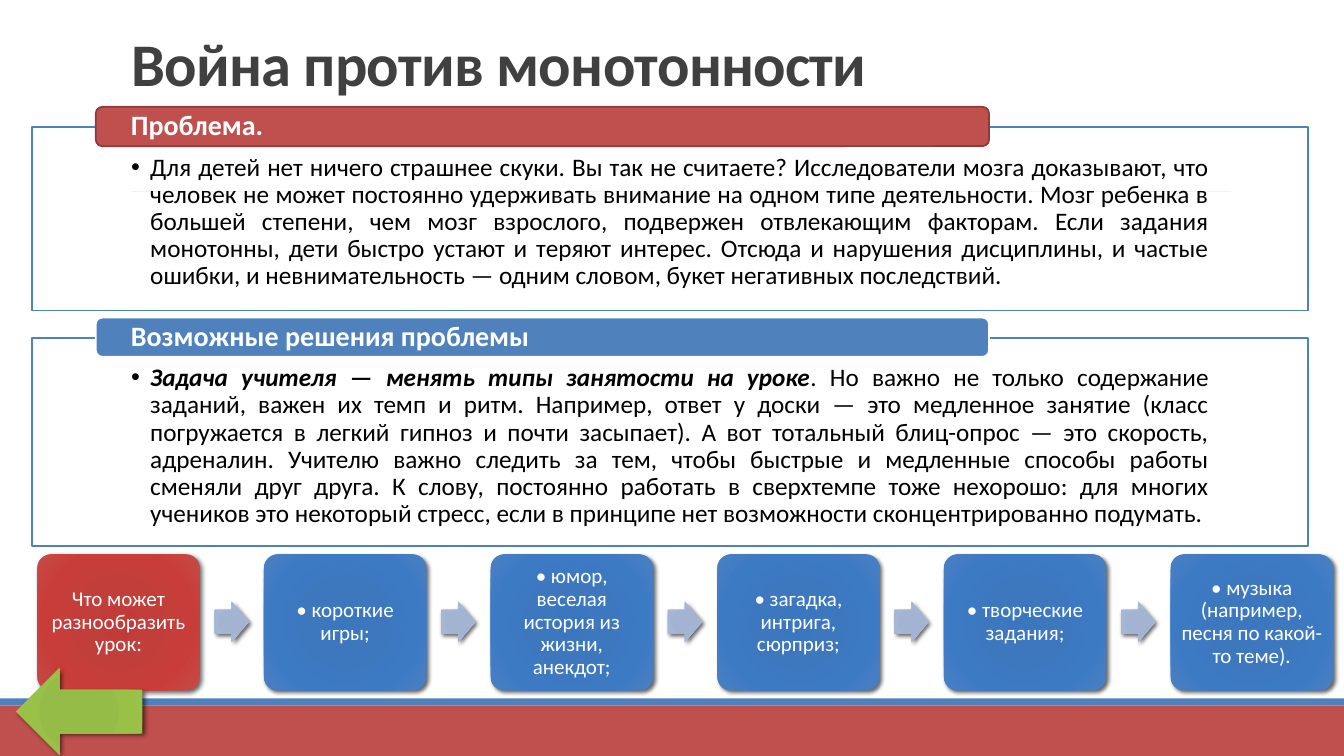
from lxml import etree
from pptx import Presentation
from pptx import util as u
from pptx.dml.color import RGBColor
from pptx.enum import shapes, text
from pptx.oxml import ns

RED, BLUE, WHITE = "C0504D", "4F81BD", "FFFFFF"
RED_GLOW = ("C33B38", "C23E3B", "C83D39", "C64B47")
BLUE_GLOW = ("3A77BF", "3D78BF", "3C7AC4", "4A80C3")
PALE_GLOW = ("A1B2D1", "A3B4D2", "A5B6D6", "B1C0DD")
GREEN_GLOW = ("95BC45", "96BC48", "99C147", "9DC054")
STOPS = (0, 34, 70, 100)

TITLE = "Война против монотонности"
PANELS = [
    # top, height, header, header fill, header outline, (text, emphasis) pieces
    (1.26, 1.82, "Проблема.", RED, "8E3B39", [
        ("Для детей нет ничего страшнее скуки. Вы так не считаете? Исследователи мозга "
         "доказывают, что человек не может постоянно удерживать внимание на одном типе "
         "деятельности. Мозг ребенка в большей степени, чем мозг взрослого, подвержен "
         "отвлекающим факторам. Если задания монотонны, дети быстро устают и теряют "
         "интерес. Отсюда и нарушения дисциплины, и частые ошибки, и невнимательность — "
         "одним словом, букет негативных последствий.", False)]),
    (3.35, 2.07, "Возможные решения проблемы", BLUE, WHITE, [
        ("Задача учителя — менять типы занятости на уроке", True),
        (". Но важно не только содержание заданий, важен их темп и ритм. Например, ответ "
         "у доски — это медленное занятие (класс погружается в легкий гипноз и почти "
         "засыпает). А вот тотальный блиц-опрос — это скорость, адреналин. Учителю важно "
         "следить за тем, чтобы быстрые и медленные способы работы сменяли друг друга. "
         "К слову, постоянно работать в сверхтемпе тоже нехорошо: для многих учеников "
         "это некоторый стресс, если в принципе нет возможности сконцентрированно "
         "подумать.", False)]),
]
STEPS = ["Что может разнообразить урок:", "• короткие игры;",
         "• юмор, веселая история из жизни, анекдот;",
         "• загадка, интрига, сюрприз;", "• творческие задания;",
         "• музыка (например, песня по какой-то теме)."]


def rgb(value):
    return RGBColor.from_string(value)


def add_xml(parent, tag, **attributes):
    return etree.SubElement(parent, ns.qn(tag), {k: str(v) for k, v in attributes.items()})


class LessonSlide:
    font = "Calibri"

    def __init__(self, deck):
        self.slide = deck.slides.add_slide(deck.slide_layouts[5])

    def shape(self, kind, box, fill=None, outline=None, adjust=()):
        figure = self.slide.shapes.add_shape(kind, *map(u.Inches, box))
        figure.shadow.inherit = False
        for index, value in enumerate(adjust):
            figure.adjustments[index] = value
        if fill:
            figure.fill.solid()
            figure.fill.fore_color.rgb = rgb(fill)
        else:
            figure.fill.background()
        if outline:
            figure.line.color.rgb = rgb(outline)
            figure.line.width = u.Pt(1.25)
        else:
            figure.line.fill.background()
        return figure

    def glowing(self, kind, box, colors, blur=3, adjust=()):
        """Shape with a radial gradient and a soft shadow."""
        figure = self.shape(kind, box, adjust=adjust)
        props = figure._element.spPr
        gradient = etree.Element(ns.qn("a:gradFill"), rotWithShape="1")
        stops = add_xml(gradient, "a:gsLst")
        for position, color in zip(STOPS, colors):
            stop = add_xml(stops, "a:gs", pos=position * 1000)
            add_xml(stop, "a:srgbClr", val=color)
        radial = add_xml(gradient, "a:path", path="circle")
        add_xml(radial, "a:fillToRect", **dict.fromkeys("ltrb", 100000))
        props.replace(props.find(ns.qn("a:noFill")), gradient)
        shadow = add_xml(props.find(ns.qn("a:effectLst")), "a:outerShdw",
                         blurRad=int(u.Pt(blur)), dist=int(u.Pt(2)), dir=45 * 60000,
                         algn="tl", rotWithShape=0)
        add_xml(add_xml(shadow, "a:srgbClr", val="000000"), "a:alpha", val=60000)
        return figure

    def add_text(self, holder, pieces, size, color, align, anchor, insets,
                 spacing=0.9, bullet=False, bold=False):
        frame = holder.text_frame
        left, top, right, bottom = map(u.Inches, insets)
        for name, value in {"word_wrap": True, "auto_size": text.MSO_AUTO_SIZE.NONE,
                            "vertical_anchor": anchor, "margin_left": left,
                            "margin_top": top, "margin_right": right,
                            "margin_bottom": bottom}.items():
            setattr(frame, name, value)
        line = frame.paragraphs[0]
        line.alignment, line.line_spacing = align, spacing
        if bullet:
            props = line._p.get_or_add_pPr()
            indent = int(u.Inches(0.19))
            props.set("marL", str(indent))
            props.set("indent", str(-indent))
            add_xml(props, "a:buFont", typeface="Arial")
            add_xml(props, "a:buChar", char="•")
        for words, emphasis in pieces:
            run = line.add_run()
            run.text = words
            for name, value in {"name": self.font, "size": u.Pt(size),
                                "bold": bold or emphasis, "italic": emphasis}.items():
                setattr(run.font, name, value)
            run.font.color.rgb = rgb(color)
        return line

    def title(self, words):
        holder = self.slide.shapes.title
        for name, value in zip(("left", "top", "width", "height"), (1.2, 0.31, 11, 0.72)):
            setattr(holder, name, u.Inches(value))
        line = self.add_text(holder, [(words, False)], 43.2, "404040",
                             text.PP_ALIGN.JUSTIFY, text.MSO_ANCHOR.BOTTOM,
                             (0.1, 0.05, 0.1, 0.05), 0.85, bold=True)
        line.runs[0]._r.get_or_add_rPr().set("spc", "-50")

    def rule(self, left, right, y):
        line = self.slide.shapes.add_connector(
            shapes.MSO_CONNECTOR.STRAIGHT, *map(u.Inches, (left, y, right, y)))
        line.line.color.rgb = rgb("808080")
        line.line.width = u.Pt(0.5)
        add_xml(line._element.spPr, "a:effectLst")

    def panel(self, top, height, header, fill, outline, pieces):
        body = self.shape(shapes.MSO_SHAPE.RECTANGLE, (0.32, top, 12.65, height), WHITE, BLUE)
        white = body._element.spPr.find(ns.qn("a:solidFill"))[0]
        add_xml(white, "a:alpha", val=90000)
        self.add_text(body, pieces, 18, "000000", text.PP_ALIGN.JUSTIFY,
                      text.MSO_ANCHOR.TOP, (0.98, 0.27, 0.98, 0.14), bullet=True)
        tab = self.shape(shapes.MSO_SHAPE.ROUNDED_RECTANGLE,
                         (0.95, top - 0.2, 8.86, 0.39), fill, outline)
        self.add_text(tab, [(header, False)], 20, WHITE, text.PP_ALIGN.JUSTIFY,
                      text.MSO_ANCHOR.MIDDLE, (0.33, 0, 0.33, 0), bold=True)

    def step(self, left, words, colors, blur):
        card = self.glowing(shapes.MSO_SHAPE.ROUNDED_RECTANGLE, (left, 5.5, 1.61, 1.35),
                            colors, blur, adjust=(0.1,))
        self.add_text(card, [(words, False)], 15, WHITE, text.PP_ALIGN.CENTER,
                      text.MSO_ANCHOR.MIDDLE, (0.06,) * 4)


def main():
    deck = Presentation()
    deck.slide_width, deck.slide_height = u.Inches(13.33), u.Inches(7.5)
    page = LessonSlide(deck)

    # Footer bands, rule and title
    page.shape(shapes.MSO_SHAPE.RECTANGLE, (0, 7, 13.33, 0.5), RED)
    page.shape(shapes.MSO_SHAPE.RECTANGLE, (0, 6.93, 13.33, 0.07), BLUE)
    page.rule(1.31, 12.21, 1.9)
    page.title(TITLE)

    # Problem and solution panels
    for panel in PANELS:
        page.panel(*panel)

    # Chain of ideas
    first, last = 0.37, 11.61
    pitch = (last - first) / (len(STEPS) - 1)
    for index, words in enumerate(STEPS):
        left = first + index * pitch
        if index:
            page.glowing(shapes.MSO_SHAPE.RIGHT_ARROW, (left - 0.49, 5.97, 0.34, 0.4),
                         PALE_GLOW, adjust=(0.6, 0.5))
        page.step(left, words, BLUE_GLOW if index else RED_GLOW, 3 if index else 3.5)

    # Back arrow
    page.glowing(shapes.MSO_SHAPE.LEFT_ARROW, (0.16, 6.63, 1.25, 0.86), GREEN_GLOW, 3.5)
    deck.save("out.pptx")


if __name__ == "__main__":
    main()
